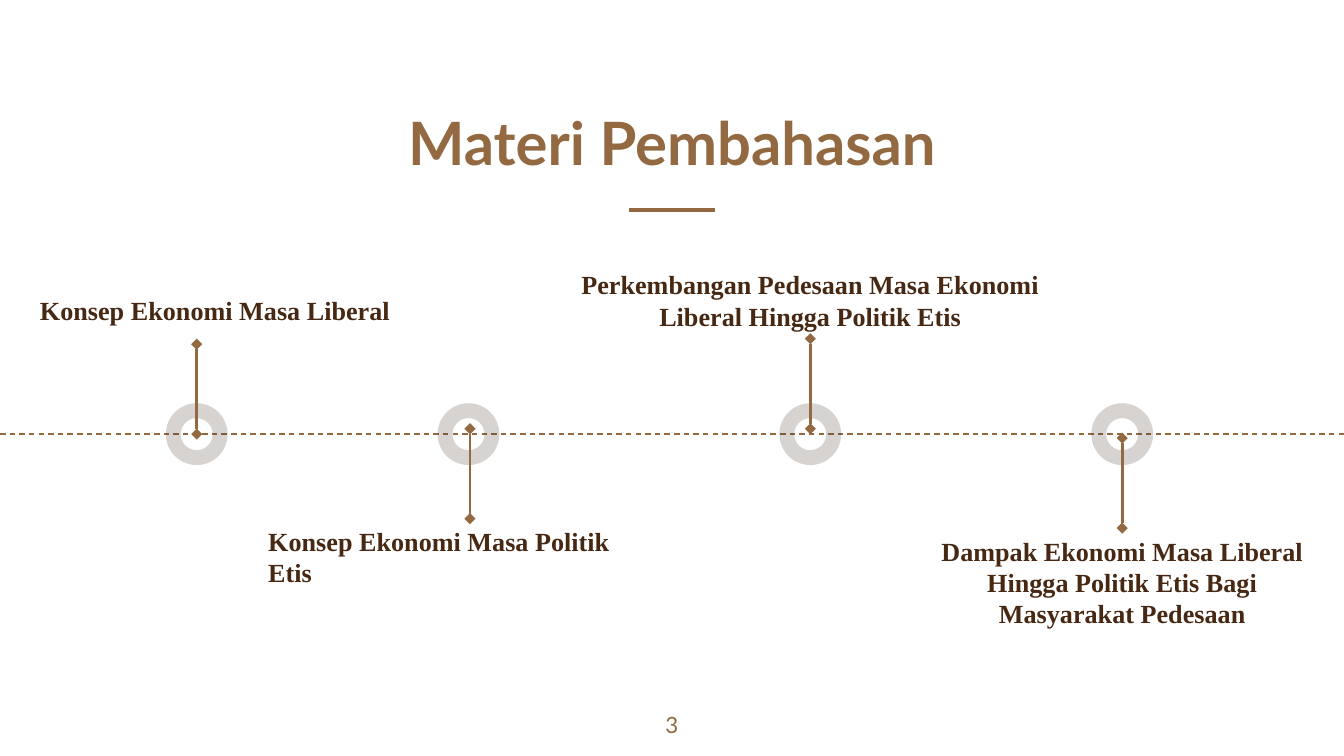
from lxml import etree
from pptx import Presentation
from pptx.dml.color import RGBColor
from pptx.enum.dml import MSO_LINE
from pptx.enum.shapes import MSO_CONNECTOR, MSO_SHAPE
from pptx.enum.text import MSO_ANCHOR, PP_ALIGN
from pptx.oxml.ns import qn
from pptx.util import Pt

STRAIGHT = MSO_CONNECTOR.STRAIGHT
DONUT = MSO_SHAPE.DONUT
DASH = MSO_LINE.DASH
TOP, BOTTOM = MSO_ANCHOR.TOP, MSO_ANCHOR.BOTTOM
LEFT, CENTER = PP_ALIGN.LEFT, PP_ALIGN.CENTER

COLORS = {"accent": "926940", "label": "472813", "ring": "403228", "page": "FFFFFF"}
SLIDE_WIDTH, SLIDE_HEIGHT = 720, 405
AXIS_Y = 232.6
RING_SIZE = 33.1
RING_OPACITY = 21
STEM_LENGTH = 48.2
WIDE, NARROW = (7.2, 7.2), (7.2, 3.6)

MILESTONES = [
    {"ring_x": 105.4, "stem_x": 105.4, "stem_y": 232.6, "direction": -1,
     "label": "Konsep Ekonomi Masa Liberal",
     "box": (11.5, 150.5, 207.4, 32.4), "format": {"insets": WIDE}},
    {"ring_x": 251, "stem_x": 251.8, "stem_y": 229.7, "direction": 1,
     "label": "Konsep Ekonomi Masa Politik Etis",
     "box": (136.6, 277.9, 203, 41), "format": {"align": LEFT}},
    {"ring_x": 434.1, "stem_x": 434.1, "stem_y": 229.7, "direction": -1,
     "label": "Perkembangan Pedesaan Masa Ekonomi Liberal Hingga Politik Etis",
     "box": (298.8, 140.4, 270.7, 41), "format": {}},
    {"ring_x": 601.2, "stem_x": 601.2, "stem_y": 234.7, "direction": 1,
     "label": "Dampak Ekonomi Masa Liberal Hingga Politik Etis Bagi Masyarakat Pedesaan",
     "box": (490.3, 283, 221.8, 58.3), "format": {}},
]


def rgb(name):
    return RGBColor.from_string(COLORS[name])


def add_text(slide, text, box, font="Times New Roman", size=14, color="label",
             bold=True, align=CENTER, anchor=TOP, insets=NARROW):
    label = slide.shapes.add_textbox(*map(Pt, box))
    frame = label.text_frame
    frame.word_wrap = True
    frame.vertical_anchor = anchor
    frame.margin_left = frame.margin_right = Pt(insets[0])
    frame.margin_top = frame.margin_bottom = Pt(insets[1])
    paragraph = frame.paragraphs[0]
    paragraph.alignment = align
    run = paragraph.add_run()
    run.text = text
    run.font.name = font
    run.font.size = Pt(size)
    run.font.bold = bold
    run.font.color.rgb = rgb(color)


def add_line(slide, start, end, width, dash=None, diamonds=False):
    line = slide.shapes.add_connector(STRAIGHT, *map(Pt, (*start, *end)))
    line.line.color.rgb = rgb("accent")
    line.line.width = Pt(width)
    if dash is not None:
        line.line.dash_style = dash
    if diamonds:
        outline = line.line._get_or_add_ln()
        for tag in ("a:headEnd", "a:tailEnd"):
            etree.SubElement(outline, qn(tag), type="diamond")
    etree.SubElement(line._element.spPr, qn("a:effectLst"))


def add_ring(slide, center_x):
    corner = (center_x - RING_SIZE / 2, AXIS_Y - RING_SIZE / 2)
    ring = slide.shapes.add_shape(DONUT, *map(Pt, (*corner, RING_SIZE, RING_SIZE)))
    ring.adjustments[0] = 0.24
    ring.shadow.inherit = False
    ring.line.fill.background()
    ring.fill.solid()
    ring.fill.fore_color.rgb = rgb("ring")
    fill_color = ring._element.spPr.find(qn("a:solidFill"))[0]
    etree.SubElement(fill_color, qn("a:alpha"), val=str(RING_OPACITY * 1000))


def add_milestone(slide, milestone):
    add_ring(slide, milestone["ring_x"])
    stem_x, stem_y = milestone["stem_x"], milestone["stem_y"]
    stem_end = stem_y + milestone["direction"] * STEM_LENGTH
    add_line(slide, (stem_x, stem_y), (stem_x, stem_end), 1.5, diamonds=True)
    add_text(slide, milestone["label"], milestone["box"], **milestone["format"])


def main():
    deck = Presentation()
    deck.slide_width, deck.slide_height = Pt(SLIDE_WIDTH), Pt(SLIDE_HEIGHT)
    slide = deck.slides.add_slide(deck.slide_layouts[6])
    slide.background.fill.solid()
    slide.background.fill.fore_color.rgb = rgb("page")

    add_line(slide, (337, 112.4), (383, 112.4), 2.25)
    add_text(slide, "Materi Pembahasan", (148.5, 34.6, 423, 67.7), font="Lato",
             size=32, color="accent", anchor=BOTTOM, insets=WIDE)
    add_line(slide, (0, AXIS_Y), (SLIDE_WIDTH, AXIS_Y), 0.75, dash=DASH)
    for milestone in MILESTONES:
        add_milestone(slide, milestone)
    add_text(slide, "3", (338.4, 373.7, 43.2, 31), font="Lato", size=12,
             color="accent", bold=False, insets=WIDE)
    deck.save("out.pptx")


if __name__ == "__main__":
    main()
